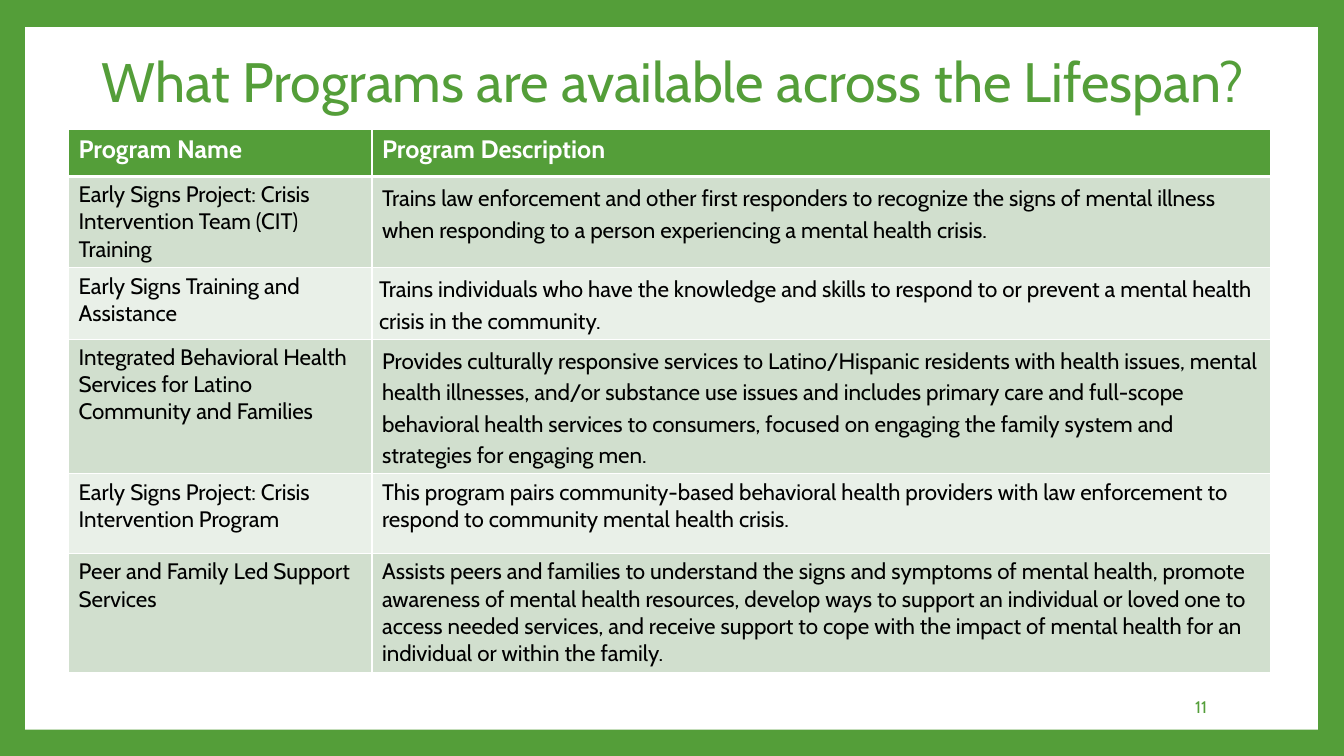
from lxml.etree import SubElement
from pptx import Presentation
from pptx.dml.color import RGBColor
from pptx.enum.shapes import MSO_SHAPE
from pptx.enum.text import MSO_ANCHOR, MSO_AUTO_SIZE, PP_ALIGN
from pptx.oxml.ns import qn
from pptx.util import Inches, Pt

TITLE = "What Programs are available across the Lifespan?"
PAGE_NUMBER = "11"
HEADINGS = ("Program Name", "Program Description")
PROGRAMS = [
    ("Early Signs Project: Crisis Intervention Team (CIT) Training",
     "Trains law enforcement and other first responders to recognize the signs of mental "
     "illness when responding to a person experiencing a mental health crisis."),
    ("Early Signs Training and Assistance",
     "Trains individuals who have the knowledge and skills to respond to or prevent a "
     "mental health crisis in the community."),
    ("Integrated Behavioral Health Services for Latino Community and Families",
     "Provides culturally responsive services to Latino/Hispanic residents with health "
     "issues, mental health illnesses, and/or substance use issues and includes primary "
     "care and full-scope behavioral health services to consumers, focused on engaging "
     "the family system and strategies for engaging men."),
    ("Early Signs Project: Crisis Intervention Program",
     "This program pairs community-based behavioral health providers with law enforcement "
     "to respond to community mental health crisis."),
    ("Peer and Family Led Support Services",
     "Assists peers and families to understand the signs and symptoms of mental health, "
     "promote awareness of mental health resources, develop ways to support an individual "
     "or loved one to access needed services, and receive support to cope with the impact "
     "of mental health for an individual or within the family."),
]
COLUMN_WIDTHS = (3.01, 8.91)
ROW_HEIGHTS = (0.47, 0.77, 0.71, 1.3, 0.79, 1.18)
SPACED_ROWS = (1, 2, 3)  # descriptions with looser line spacing
CENTERED_ROW = 2  # description with tight margins, anchored in the middle

FONT = "Cabin"
COLORS = {"green": "549E39", "white": "FFFFFF", "black": "000000",
          "dark band": "D1DFCE", "light band": "E9F0E8"}


def color(name):
    return RGBColor.from_string(COLORS[name])


def place(shape, left, top, width, height):
    shape.left, shape.top = Inches(left), Inches(top)
    shape.width, shape.height = Inches(width), Inches(height)


def style(paragraph, size, color_name, bold=False):
    font = paragraph.font
    font.name, font.size, font.bold = FONT, Pt(size), bold
    font.color.rgb = color(color_name)


def paint(fill, color_name):
    fill.solid()
    fill.fore_color.rgb = color(color_name)


def add_borders(cell, bottom_width, top_width):
    properties = cell._tc.get_or_add_tcPr()
    for side, width in (("L", 1), ("R", 1), ("T", top_width), ("B", bottom_width)):
        line = SubElement(properties, qn(f"a:ln{side}"), w=str(Pt(width)))
        solid = SubElement(line, qn("a:solidFill"))
        SubElement(solid, qn("a:srgbClr"), val=COLORS["white"])


def add_panel(slide):
    """White panel behind everything, leaving the background as a frame."""
    panel = slide.shapes.add_shape(MSO_SHAPE.RECTANGLE, 0, 0, 0, 0)
    place(panel, 0.25, 0.27, 12.82, 6.97)
    paint(panel.fill, "white")
    panel.line.fill.background()
    panel.shadow.inherit = False
    slide.shapes.title._element.addprevious(panel._element)


def add_title(slide):
    title = slide.shapes.title
    place(title, 0.71, 0.4, 11.92, 0.88)
    frame = title.text_frame
    frame.text = TITLE
    frame.auto_size = MSO_AUTO_SIZE.NONE
    frame.vertical_anchor = MSO_ANCHOR.MIDDLE
    paragraph = frame.paragraphs[0]
    paragraph.alignment = PP_ALIGN.CENTER
    paragraph.line_spacing = 0.9
    style(paragraph, 39.6, "green")


def add_program_table(slide):
    rows = [HEADINGS, *PROGRAMS]
    table = slide.shapes.add_table(
        len(rows), len(HEADINGS), Inches(0.68), Inches(1.28),
        Inches(sum(COLUMN_WIDTHS)), Inches(sum(ROW_HEIGHTS))).table
    for column, width in zip(table.columns, COLUMN_WIDTHS):
        column.width = Inches(width)
    for row, height in zip(table.rows, ROW_HEIGHTS):
        row.height = Inches(height)

    for row_index, texts in enumerate(rows):
        is_header = row_index == 0
        band = "green" if is_header else "dark band" if row_index % 2 else "light band"
        for column_index, text in enumerate(texts):
            cell = table.cell(row_index, column_index)
            add_borders(cell, 3 if is_header else 1, 3 if row_index == 1 else 1)
            paint(cell.fill, band)
            cell.text = text
            paragraph = cell.text_frame.paragraphs[0]
            if is_header:
                style(paragraph, 18, "white", bold=True)
            else:
                style(paragraph, 16, "black")
            if column_index == 1 and row_index in SPACED_ROWS:
                paragraph.line_spacing = 1.15
                paragraph.space_before = paragraph.space_after = Pt(4)

    centered = table.cell(CENTERED_ROW, 1)
    centered.vertical_anchor = MSO_ANCHOR.MIDDLE
    centered.margin_left = centered.margin_right = Inches(0.07)
    centered.margin_top = centered.margin_bottom = 0


def add_page_number(slide):
    box = slide.shapes.add_textbox(0, 0, 0, 0)
    place(box, 10.2, 6.81, 1.87, 0.4)
    frame = box.text_frame
    frame.word_wrap = True
    frame.vertical_anchor = MSO_ANCHOR.MIDDLE
    frame.text = PAGE_NUMBER
    paragraph = frame.paragraphs[0]
    paragraph.alignment = PP_ALIGN.RIGHT
    style(paragraph, 12, "green")


def main():
    presentation = Presentation()
    presentation.slide_width, presentation.slide_height = Inches(13.33), Inches(7.5)
    slide = presentation.slides.add_slide(presentation.slide_layouts[5])
    paint(slide.background.fill, "green")
    add_panel(slide)
    add_title(slide)
    add_program_table(slide)
    add_page_number(slide)
    presentation.save("out.pptx")


if __name__ == "__main__":
    main()
